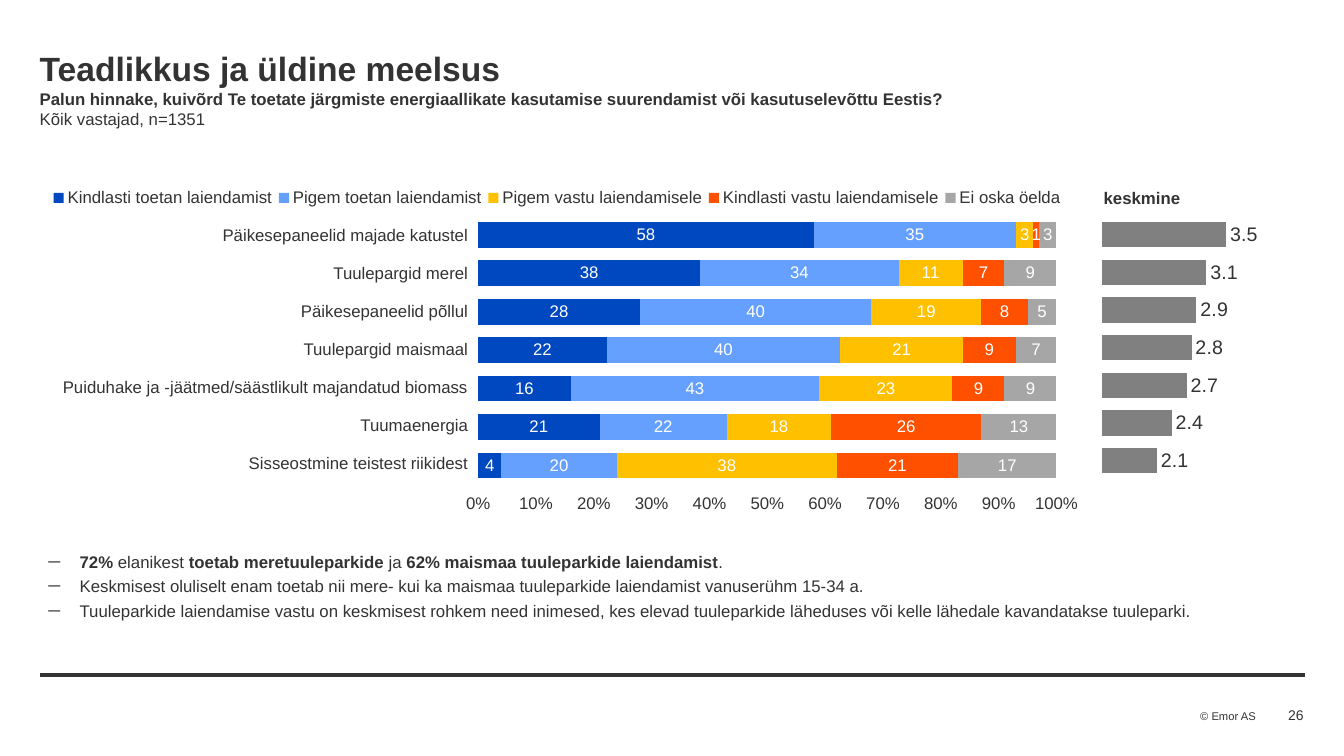
from dataclasses import dataclass

from lxml import etree
from pptx import Presentation
from pptx import util as u
from pptx.chart.data import CategoryChartData
from pptx.dml.color import RGBColor
from pptx.enum import chart as ch
from pptx.enum import shapes, text
from pptx.oxml import parse_xml
from pptx.oxml.ns import nsdecls, qn


@dataclass(frozen=True)
class Theme:
    face: str = "Arial"
    ink: str = "333333"
    white: str = "FFFFFF"
    gray: str = "808080"
    head: int = 24
    mean: int = 14
    body: int = 12
    page: int = 10
    foot: int = 8


T = Theme()
WIDE, HIGH = u.Inches(13.33), u.Inches(7.5)

TITLE = [("Teadlikkus ja üldine meelsus", T.head, True),
         ("Palun hinnake, kuivõrd Te toetate järgmiste energiaallikate kasutamise "
          "suurendamist või kasutuselevõttu Eestis?", T.body, True),
         ("Kõik vastajad, n=1351", T.body, False)]
SOURCES = ["Päikesepaneelid majade katustel", "Tuulepargid merel",
           "Päikesepaneelid põllul", "Tuulepargid maismaal",
           "Puiduhake ja -jäätmed/säästlikult majandatud biomass",
           "Tuumaenergia", "Sisseostmine teistest riikidest"]
VIEWS = [("Kindlasti toetan laiendamist", [58, 38, 28, 22, 16, 21, 4], "0048BF"),
         ("Pigem toetan laiendamist", [35, 34, 40, 40, 43, 22, 20], "66A0FF"),
         ("Pigem vastu laiendamisele", [3, 11, 19, 21, 23, 18, 38], "FFC000"),
         ("Kindlasti vastu laiendamisele", [1, 7, 8, 9, 9, 26, 21], "FF5000"),
         ("Ei oska öelda", [3, 9, 5, 7, 9, 13, 17], "A6A6A6")]
MEANS = [("Series 1", [3.5, 3.1, 2.9, 2.8, 2.7, 2.4, 2.1], T.gray)]
POINTS = [[("72%", True), (" elanikest ", False), ("toetab meretuuleparkide ", True),
           ("ja ", False), ("62% maismaa tuuleparkide laiendamist", True), (".", False)],
          [("Keskmisest oluliselt enam toetab nii mere- kui ka maismaa tuuleparkide "
            "laiendamist vanuserühm 15-34 a.", False)],
          [("Tuuleparkide laiendamise vastu on keskmisest rohkem need inimesed, kes "
            "elevad tuuleparkide läheduses või kelle lähedale kavandatakse "
            "tuuleparki.", False)]]


def grid(left, top, wide, high):
    """Turn percent of the slide's width and height into lengths."""
    return [round(share * side / 100)
            for share, side in zip((left, top, wide, high), (WIDE, HIGH) * 2)]


def apply(item, **form):
    for name, value in form.items():
        setattr(item, name, value)


def style(font, size, bold=False, ink=T.ink):
    apply(font, name=T.face, size=u.Pt(size), bold=bold)
    font.color.rgb = RGBColor.from_string(ink)


def write(para, words, size, bold=False):
    run = para.add_run()
    run.text = words
    style(run.font, size, bold)


def frame(shape, box, **form):
    left, top, wide, high = box
    apply(shape, left=left, top=top, width=wide, height=high)
    plain = dict(margin_left=0, margin_right=0, margin_top=0, margin_bottom=0,
                 word_wrap=True, auto_size=text.MSO_AUTO_SIZE.NONE,
                 vertical_anchor=text.MSO_ANCHOR.TOP)
    apply(shape.text_frame, **{**plain, **form})
    return shape.text_frame


def add_head(slide, box):
    para = frame(slide.shapes.title, box).paragraphs[0]
    apply(para, alignment=text.PP_ALIGN.LEFT, space_before=u.Pt(0))
    for row, (words, size, bold) in enumerate(TITLE):
        if row:
            para.add_line_break()
            gap = para._p.findall(qn("a:br"))[-1]
            etree.SubElement(gap, qn("a:rPr"), sz=str(size * 100))
        write(para, words, size, bold)


def add_list(slide, box):
    body = frame(slide.placeholders[1], box)
    for row, parts in enumerate(POINTS):
        para = body.add_paragraph() if row else body.paragraphs[0]
        apply(para, alignment=text.PP_ALIGN.JUSTIFY, space_before=u.Pt(3 if row else 0))
        props = para._p.get_or_add_pPr()
        inset = u.Inches(0.31)
        props.set("marL", str(inset))
        props.set("indent", str(-inset))
        etree.SubElement(props, qn("a:buChar"), char="─")
        for words, bold in parts:
            write(para, words, T.body, bold)


def add_names(slide, box):
    """Table with source names at left and open columns behind the charts."""
    left, top, wide, high = box
    table = slide.shapes.add_table(len(SOURCES) + 1, 3, *box).table
    apply(table, first_row=False, horz_banding=False)
    for col, share in zip(table.columns, (34.05, 49.95, 16)):
        col.width = round(wide * share / 100)
    for row in table.rows:
        row.height = high // len(table.rows)
    thin = u.Inches(0.01)
    for cell in table.iter_cells():
        cell.fill.background()
        apply(cell, margin_left=thin, margin_right=thin, margin_top=thin,
              margin_bottom=0, vertical_anchor=text.MSO_ANCHOR.MIDDLE)
    for row, name in enumerate(SOURCES, 1):
        para = table.cell(row, 0).text_frame.paragraphs[0]
        para.alignment = text.PP_ALIGN.RIGHT
        write(para, name, T.body)
    mean = table.cell(0, 2)
    mean.margin_left = u.Inches(0.04)
    write(mean.text_frame.paragraphs[0], "keskmine", T.body, True)


def place(part, spots, inner=False):
    """Fix a chart part at x, y, w, h as shares of the chart."""
    for old in part.findall(qn("c:layout")):
        part.remove(old)
    target = '<c:layoutTarget val="inner"/>' if inner else ""
    modes = "".join(f'<c:{k}Mode val="edge"/>' for k in "xy")
    sizes = "".join(f'<c:{k} val="{v}"/>' for k, v in zip("xywh", spots))
    node = parse_xml(f'<c:layout {nsdecls("c")}><c:manualLayout>{target}{modes}{sizes}'
                     "</c:manualLayout></c:layout>")
    if inner:
        part.insert(0, node)
    else:
        part.find(qn("c:legendPos")).addnext(node)


def add_bars(slide, box, kind, rows, plot, scale, label):
    data = CategoryChartData()
    data.categories = [str(n + 1) for n in range(len(SOURCES))]
    for name, values, _ in rows:
        data.add_series(name, values)
    chart = slide.shapes.add_chart(kind, *box, data).chart
    apply(chart, has_title=False, has_legend=False)
    style(chart.font, T.body)
    space = chart.element.find(qn("c:chart"))
    space.addnext(parse_xml(f'<c:spPr {nsdecls("c", "a")}><a:noFill/>'
                            "<a:ln><a:noFill/></a:ln></c:spPr>"))
    place(space.find(qn("c:plotArea")), plot, inner=True)
    apply(chart.category_axis, reverse_order=True, visible=False,
          has_major_gridlines=False)
    axis = chart.value_axis
    apply(axis, has_major_gridlines=False, major_tick_mark=ch.XL_TICK_MARK.NONE, **scale)
    axis.format.line.fill.background()
    bars = chart.plots[0]
    apply(bars, gap_width=50, vary_by_categories=False)
    for series, (_, _, color) in zip(bars.series, rows):
        series.format.fill.solid()
        series.format.fill.fore_color.rgb = RGBColor.from_string(color)
        marks = series.data_labels
        apply(marks, show_value=True, number_format=label["form"],
              number_format_is_linked=False, position=label["spot"])
        style(marks.font, label["size"], ink=label["ink"])
    return chart


def add_views(slide, box):
    chart = add_bars(
        slide, box, ch.XL_CHART_TYPE.BAR_STACKED_100, VIEWS, (0.41, 0.13, 0.55, 0.61),
        dict(minimum_scale=0, maximum_scale=1, major_unit=0.1,
             tick_label_position=ch.XL_TICK_LABEL_POSITION.HIGH),
        dict(form="0", spot=ch.XL_LABEL_POSITION.CENTER, size=T.body, ink=T.white))
    apply(chart.plots[0], overlap=100)
    apply(chart.value_axis.tick_labels, number_format="0%", number_format_is_linked=False)
    chart.has_legend = True
    apply(chart.legend, position=ch.XL_LEGEND_POSITION.TOP, include_in_layout=False)
    style(chart.legend.font, T.body)
    place(chart.legend._element, (0, 0.06, 0.97, 0.06))


def add_means(slide, box):
    add_bars(
        slide, box, ch.XL_CHART_TYPE.BAR_CLUSTERED, MEANS, (0.06, 0.07, 0.89, 0.7),
        dict(minimum_scale=1, maximum_scale=5,
             tick_label_position=ch.XL_TICK_LABEL_POSITION.NONE),
        dict(form="#,##0.0", spot=ch.XL_LABEL_POSITION.OUTSIDE_END, size=T.mean, ink=T.ink))


def add_foot(slide, box):
    left, top, wide, high = box
    rule = slide.shapes.add_connector(shapes.MSO_CONNECTOR.STRAIGHT,
                                      left, top, left + wide, top)
    rule.line.width = u.Pt(3)
    rule.line.color.rgb = RGBColor.from_string(T.ink)
    etree.SubElement(rule._element.spPr, qn("a:effectLst"))
    for words, size, spot, form, side in (
            ("© Emor AS", T.foot, grid(89.3, 93.8, 4.2, 1.73),
             dict(word_wrap=False), text.PP_ALIGN.LEFT),
            ("26", T.page, grid(89.05, 93.1, 7.95, 2.93),
             dict(vertical_anchor=text.MSO_ANCHOR.MIDDLE), text.PP_ALIGN.RIGHT)):
        para = frame(slide.shapes.add_textbox(*spot), spot, **form).paragraphs[0]
        para.alignment = side
        write(para, words, size)


def main():
    deck = Presentation()
    apply(deck, slide_width=WIDE, slide_height=HIGH)
    slide = deck.slides.add_slide(deck.slide_layouts[1])
    add_head(slide, grid(2.95, 6.35, 94.07, 5.87))
    add_names(slide, grid(2.93, 23.65, 93.92, 40.13))
    add_means(slide, grid(81.02, 25.05, 16.58, 49.87))
    add_views(slide, grid(3.5, 20.93, 78.24, 58.4))
    add_list(slide, grid(3.6, 72.95, 94.07, 9.2))
    add_foot(slide, grid(2.95, 89.27, 94.14, 10))
    deck.save("out.pptx")


if __name__ == "__main__":
    main()
